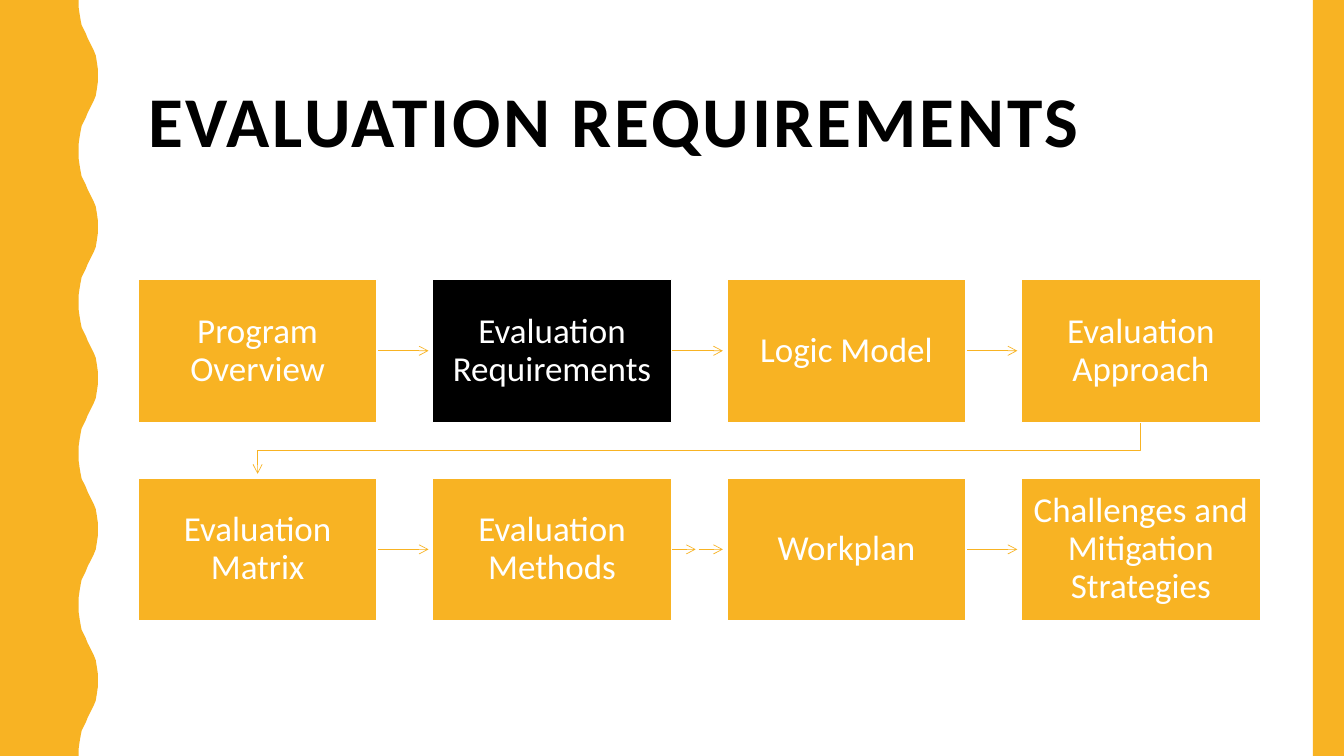
import dataclasses

import pptx
import pptx.dml.color
import pptx.enum.shapes
import pptx.enum.text
import pptx.oxml
import pptx.oxml.ns
import pptx.util

Inches = pptx.util.Inches
Pt = pptx.util.Pt
RGB = pptx.dml.color.RGBColor
qn = pptx.oxml.ns.qn


@dataclasses.dataclass(frozen=True)
class Theme:
    """Colours, font and type sizes of the deck."""
    accent: RGB = RGB.from_string("F8B323")
    dark: RGB = RGB.from_string("000000")
    light: RGB = RGB.from_string("FFFFFF")
    font: str = "Calibri"
    title_size: int = 51
    step_size: int = 25


THEME = Theme()
STEPS = (
    ("Program Overview", "Evaluation Requirements", "Logic Model", "Evaluation Approach"),
    ("Evaluation Matrix", "Evaluation Methods", "Workplan",
     "Challenges and Mitigation Strategies"),
)
CURRENT = "Evaluation Requirements"
DOUBLE_ARROW_FROM = "Evaluation Methods"
WAVE = ((0, 0), (0, 0.07), (0.01, 0.14), (0.02, 0.2), (0.03, 0.25), (0.05, 0.29),
        (0.07, 0.33), (0.09, 0.38), (0.11, 0.42), (0.13, 0.46), (0.15, 0.5),
        (0.17, 0.55), (0.18, 0.61), (0.19, 0.68), (0.19, 0.75))


def style_text(p, size, color, bold=False):
    """Format a paragraph with the theme font."""
    p.line_spacing = 0.9
    p.font.name = THEME.font
    p.font.size = Pt(size)
    p.font.bold = bold
    p.font.color.rgb = color


def paint(sp, fill, line=None):
    """Give a shape a flat fill and an optional 1 pt outline."""
    sp.shadow.inherit = False
    sp.fill.solid()
    sp.fill.fore_color.rgb = fill
    if line is None:
        sp.line.fill.background()
    else:
        sp.line.color.rgb = line
        sp.line.width = Pt(1)


def add_head(sp):
    """Draw a line as a thin accent arrow without a shadow."""
    sp.line.color.rgb = THEME.accent
    sp.line.width = Pt(0.5)
    spPr = sp._element.spPr
    ln = spPr.find(qn("a:ln"))
    ln.append(ln.makeelement(qn("a:tailEnd"), {"type": "arrow"}))
    if spPr.find(qn("a:effectLst")) is None:
        spPr.append(spPr.makeelement(qn("a:effectLst"), {}))


def add_arrow(s, x1, x2, y):
    """Add a horizontal arrow."""
    add_head(s.shapes.add_connector(
        pptx.enum.shapes.MSO_CONNECTOR.STRAIGHT,
        Inches(x1), Inches(y), Inches(x2), Inches(y)))


def add_polyline(s, points, close):
    """Add a freeform through points given in inches."""
    points = [(Inches(x), Inches(y)) for x, y in points]
    builder = s.shapes.build_freeform(*points[0])
    builder.add_line_segments(points[1:], close=close)
    return builder.convert_to_shape()


def add_wave(s, left, top, width, height, periods=5):
    """Add the left band, whose right edge is a wave."""
    period = height / periods
    base = left + width - WAVE[-1][0]
    half = WAVE + tuple((dx, period - dy) for dx, dy in WAVE[-2::-1])
    edge = [(base + dx, top + i * period + dy) for i in range(periods) for dx, dy in half]
    points = [(left, top), *edge, (left, top + height)]
    paint(add_polyline(s, points, True), THEME.accent)


def add_band(s, left, top, width, height):
    """Add the plain band on the right edge."""
    sp = s.shapes.add_shape(pptx.enum.shapes.MSO_SHAPE.RECTANGLE,
                            Inches(left), Inches(top), Inches(width), Inches(height))
    paint(sp, THEME.accent)


def add_title(s, text, left, top, width, height):
    """Move and format the title placeholder."""
    sp = s.shapes.title
    sp.left, sp.top = Inches(left), Inches(top)
    sp.width, sp.height = Inches(width), Inches(height)
    tf = sp.text_frame
    tf.text = text
    tf.auto_size = pptx.enum.text.MSO_AUTO_SIZE.NONE
    tf.vertical_anchor = pptx.enum.text.MSO_ANCHOR.MIDDLE
    p = tf.paragraphs[0]
    p.alignment = pptx.enum.text.PP_ALIGN.LEFT
    style_text(p, THEME.title_size, THEME.dark, bold=True)
    p._p.pPr.find(qn("a:defRPr")).set("spc", "200")


def add_step(s, text, left, top, width, height):
    """Add one step box, dark when it is the current step."""
    sp = s.shapes.add_shape(pptx.enum.shapes.MSO_SHAPE.RECTANGLE,
                            Inches(left), Inches(top), Inches(width), Inches(height))
    paint(sp, THEME.dark if text == CURRENT else THEME.accent, THEME.light)
    tf = sp.text_frame
    tf.word_wrap = True
    tf.vertical_anchor = pptx.enum.text.MSO_ANCHOR.MIDDLE
    tf.margin_left = tf.margin_right = tf.margin_top = tf.margin_bottom = Inches(0.12)
    tf.text = text
    p = tf.paragraphs[0]
    p.alignment = pptx.enum.text.PP_ALIGN.CENTER
    style_text(p, THEME.step_size, THEME.light)


def add_process(s, left, top, width, height):
    """Add the grid of steps with arrows from each step to the next."""
    box_w, box_h, reach = 2.37, 1.42, 0.51
    pitch_x = (width - box_w) / (len(STEPS[0]) - 1)
    pitch_y = height - box_h
    for row, names in enumerate(STEPS):
        y = top + row * pitch_y
        for col, name in enumerate(names):
            x = left + col * pitch_x
            end = x + box_w
            if col < len(names) - 1:
                stops = [(0, reach)]
                if name == DOUBLE_ARROW_FROM:
                    stops = [(0, 0.24), (0.27, reach)]
                for a, b in stops:
                    add_arrow(s, end + a, end + b, y + box_h / 2)
            elif row < len(STEPS) - 1:
                x1, x2 = x + box_w / 2, left + box_w / 2
                y1 = y + box_h
                bend = y1 + 0.28
                sp = add_polyline(
                    s, [(x1, y1), (x1, bend), (x2, bend), (x2, y1 + reach)], False)
                sp.fill.background()
                add_head(sp)
            add_step(s, name, x, y, box_w, box_h)


def add_process_slide(prs):
    """Build the process slide."""
    s = prs.slides.add_slide(prs.slide_layouts[5])
    s.background.fill.solid()
    s.background.fill.fore_color.rgb = THEME.light
    add_title(s, "EVALUATION REQUIREMENTS", 1.37, 0.42, 11.13, 1.63)
    add_wave(s, 0, 0, 0.97, 7.5)
    add_band(s, 13.02, 0, 0.31, 7.5)
    add_process(s, 1.37, 2.77, 11.13, 3.39)


def main():
    """Create and save the presentation."""
    prs = pptx.Presentation()
    prs.slide_width, prs.slide_height = Inches(13.33), Inches(7.5)
    add_process_slide(prs)
    prs.save("out.pptx")


if __name__ == "__main__":
    main()
